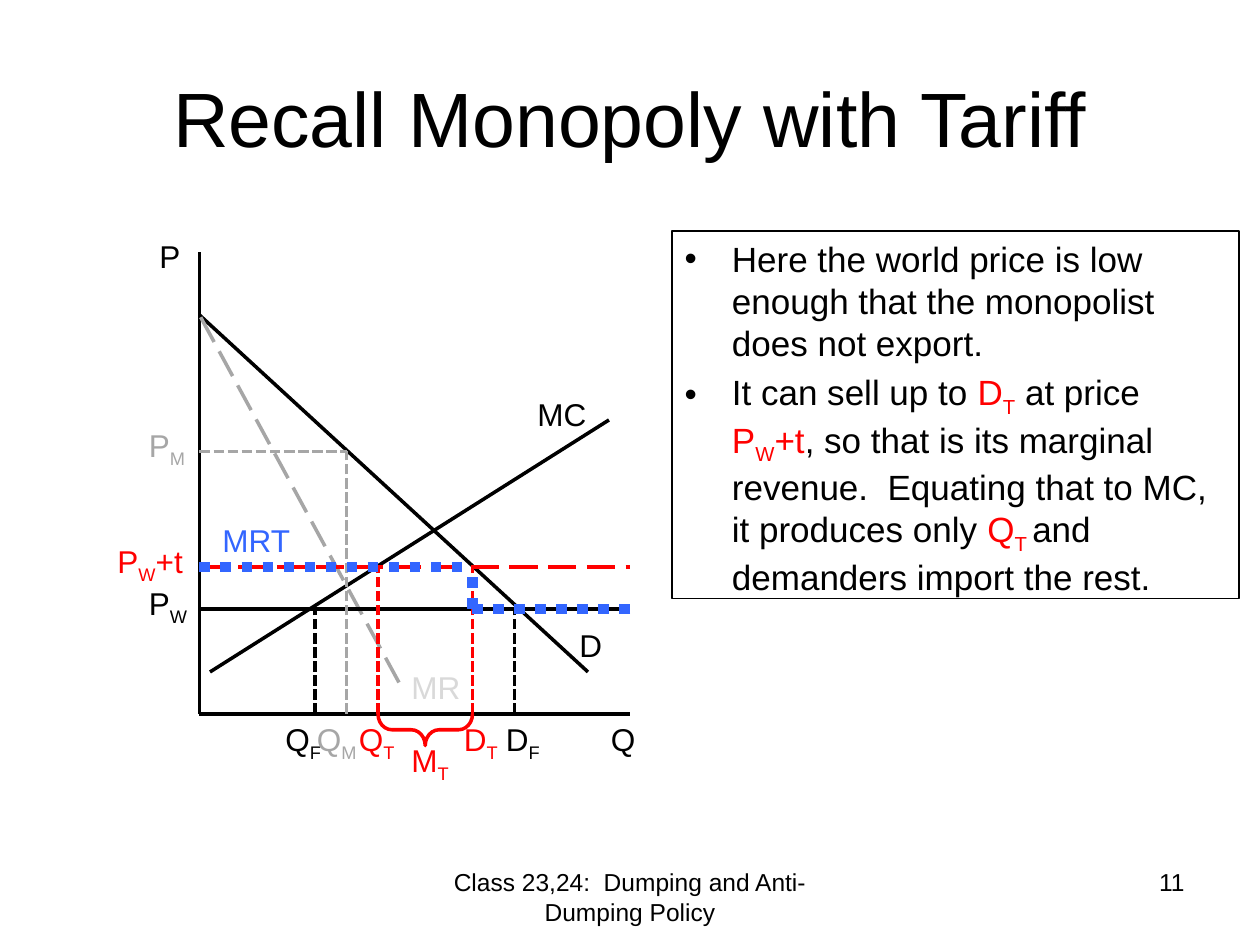
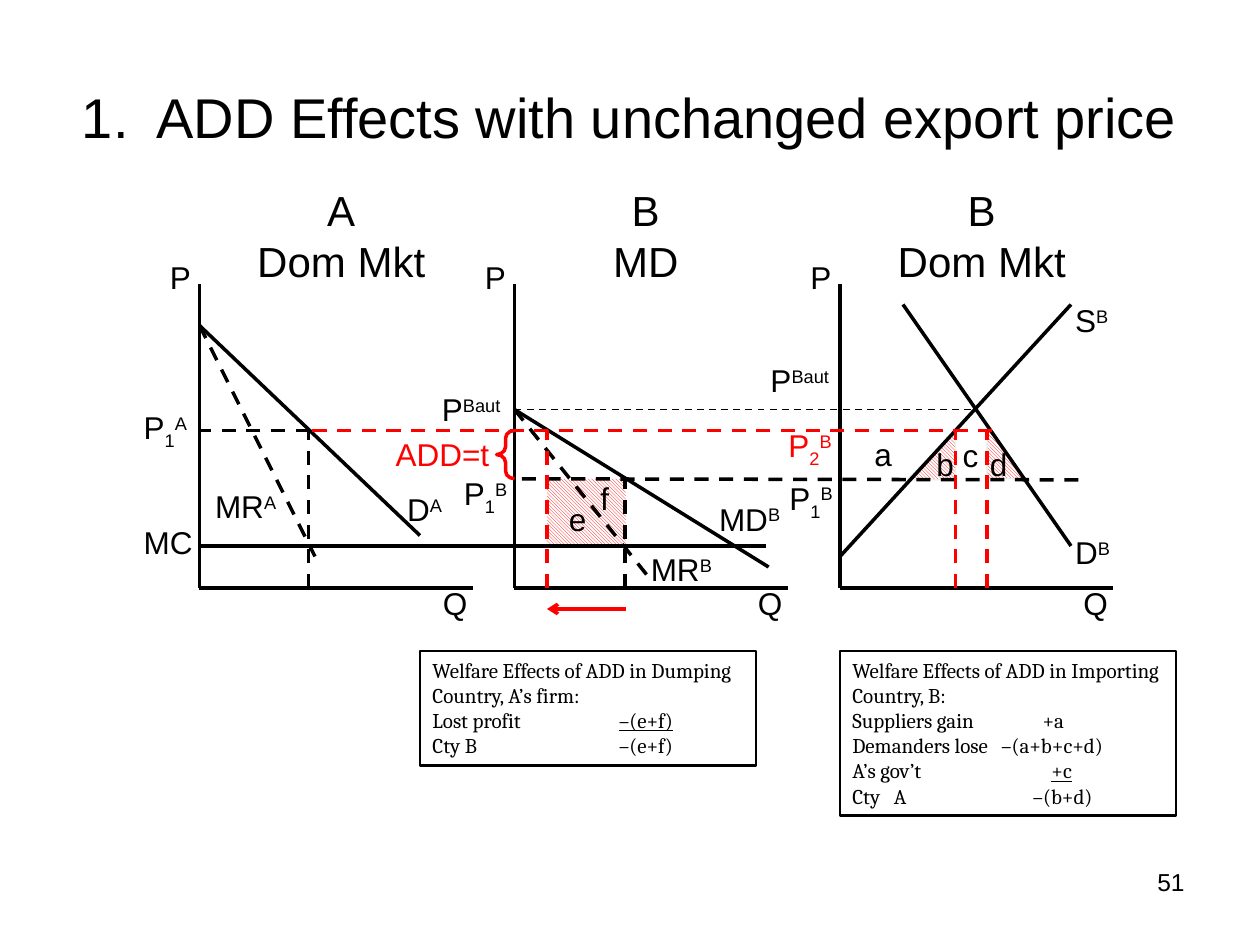
from lxml.etree import SubElement
from pptx import Presentation
from pptx.dml.color import RGBColor
from pptx.enum.dml import MSO_LINE, MSO_PATTERN
from pptx.enum.shapes import MSO_CONNECTOR, MSO_SHAPE
from pptx.enum.text import MSO_ANCHOR, MSO_AUTO_SIZE, PP_ALIGN
from pptx.oxml.ns import qn
from pptx.util import Inches, Pt

COLORS = {"ink": "000000", "red": "FF0000", "blue": "3366FF", "gray": "A6A6A6",
          "pale": "D9D9D9", "white": "FFFFFF", "mist": "E0F1F2"}
LAYOUTS = {"title and body": 1, "title only": 5}
BASELINES = {"_": "-25000", "^": "30000"}
SLIDE_WIDTH, SLIDE_HEIGHT = Inches(10), Inches(7.5)
CELL = SLIDE_WIDTH / 120  # all positions are in columns and rows of this grid
LABEL_SIZE = (9, 4.8)


def cells(*values):
    return [round(value * CELL) for value in values]


def color(name):
    return RGBColor.from_string(COLORS[name])


def write(paragraph, pieces, size, ink="ink", font="Arial"):
    """Add runs; a piece is text or (text, colour), with _ for sub- and ^ for superscript."""
    for piece in pieces:
        text, run_ink = piece if isinstance(piece, tuple) else (piece, ink)
        run = paragraph.add_run()
        run.text = text.lstrip("_^")
        run.font.name, run.font.size = font, Pt(size)
        run.font.color.rgb = color(run_ink)
        if text[0] in BASELINES:
            run.font._element.set("baseline", BASELINES[text[0]])


def add_text(slide, box, lines, size, ink="ink", align=PP_ALIGN.LEFT):
    frame = slide.shapes.add_textbox(*cells(*box)).text_frame
    frame.word_wrap = True
    for index, pieces in enumerate(lines):
        paragraph = frame.add_paragraph() if index else frame.paragraphs[0]
        paragraph.alignment = align
        write(paragraph, pieces, size, ink)


def add_labels(slide, ink, labels):
    for left, top, *pieces in labels:
        add_text(slide, (left, top, *LABEL_SIZE), [pieces], 18, ink)


def add_line(slide, start, end, ink="ink", dash=None, width=2, arrow=False):
    connector = slide.shapes.add_connector(MSO_CONNECTOR.STRAIGHT, *cells(*start, *end))
    connector.line.color.rgb = color(ink)
    connector.line.width = Pt(width)
    if dash:
        connector.line.dash_style = dash
    if arrow:
        SubElement(connector.line._get_or_add_ln(), qn("a:tailEnd"), type="arrow")
    SubElement(connector._element.spPr, qn("a:effectLst"))


def add_axes(slide, left, bottom, top, right):
    add_line(slide, (left, bottom), (right, bottom))
    add_line(slide, (left, bottom), (left, top))


def add_outline(slide, kind, box, ink="ink", width=2.0):
    shape = slide.shapes.add_shape(kind, *cells(*box))
    shape.shadow.inherit = False
    shape.fill.background()
    shape.line.color.rgb = color(ink)
    shape.line.width = Pt(width)
    return shape


def add_brace(slide, box, rotation=0):
    brace = add_outline(slide, MSO_SHAPE.LEFT_BRACE, box, "red")
    brace.adjustments[0] = 0.44
    brace.rotation = rotation


def add_hatched(slide, kind, box, outlined=True, flipped=False):
    shape = add_outline(slide, kind, box, "mist", 0.75)
    shape.fill.patterned()
    shape.fill.pattern = MSO_PATTERN.DARK_DOWNWARD_DIAGONAL
    shape.fill.fore_color.rgb = color("red")
    shape.fill.back_color.rgb = color("white")
    if not outlined:
        shape.line.fill.background()
    if flipped:
        shape._element.spPr.xfrm.set("flipH", "1")


def add_welfare_box(slide, box, heading, rows):
    """Add a bordered list; each row is (text, underlined text, tab stops in inches)."""
    frame = add_outline(slide, MSO_SHAPE.RECTANGLE, box, width=1.5).text_frame
    frame.word_wrap = True
    frame.vertical_anchor = MSO_ANCHOR.TOP
    for index, (text, underlined, stops) in enumerate([(heading, "", ()), *rows]):
        paragraph = frame.add_paragraph() if index else frame.paragraphs[0]
        paragraph.alignment = PP_ALIGN.LEFT
        write(paragraph, filter(None, (text, underlined)), 12, font="Cambria")
        if underlined:
            paragraph.runs[-1].font.underline = True
        if stops:
            tabs = SubElement(paragraph._p.get_or_add_pPr(), qn("a:tabLst"))
            for stop in stops:
                SubElement(tabs, qn("a:tab"), pos=str(Inches(stop)), algn="l")


def start_slide(presentation, layout, title, size, number):
    slide = presentation.slides.add_slide(presentation.slide_layouts[LAYOUTS[layout]])
    heading = slide.shapes.title
    heading.left, heading.top, heading.width, heading.height = cells(6, 3.6, 108, 15)
    frame = heading.text_frame
    frame.auto_size = MSO_AUTO_SIZE.NONE
    frame.vertical_anchor = MSO_ANCHOR.MIDDLE
    frame.paragraphs[0].alignment = PP_ALIGN.CENTER
    write(frame.paragraphs[0], [title], size)
    add_text(slide, (86, 82, 28, 6.2), [[number]], 14, align=PP_ALIGN.RIGHT)
    return slide


def fill_body(slide, bullets):
    body = slide.placeholders[1]
    body.left, body.top, body.width, body.height = cells(64, 22, 54, 35)
    body.line.color.rgb = color("ink")
    body.line.width = Pt(0.75)
    frame = body.text_frame
    frame.auto_size = MSO_AUTO_SIZE.NONE
    for index, pieces in enumerate(bullets):
        paragraph = frame.add_paragraph() if index else frame.paragraphs[0]
        write(paragraph, pieces, 20)


def build_tariff_slide(presentation):
    slide = start_slide(presentation, "title and body", "Recall Monopoly with Tariff", 44, "11")
    fill_body(slide, [
        ["Here the world price is low enough that the monopolist does not export."],
        ["It can sell up to ", ("D", "red"), ("_T", "red"), " at price ", ("P", "red"),
         ("_W", "red"), ("+t", "red"),
         ", so that is its marginal revenue.  Equating that to MC, it produces only ",
         ("Q", "red"), ("_T ", "red"), "and demanders import the rest."]])
    left, bottom, right = 19, 68, 60
    world, tariff, monopoly = 58, 54, 43  # price rows
    dotted, fine = MSO_LINE.ROUND_DOT, MSO_LINE.SQUARE_DOT
    add_axes(slide, left, bottom, 24, right)
    add_line(slide, (56, 64), (left, 30))
    add_line(slide, (58, 40), (20, 64))
    add_line(slide, (38, 65), (left, 30), "gray", MSO_LINE.LONG_DASH)
    add_line(slide, (left, monopoly), (33, monopoly), "gray", fine)
    add_line(slide, (left, world), (right, world))
    add_line(slide, (left, tariff), (right, tariff), "red", MSO_LINE.LONG_DASH)
    for column, price, ink in [(33, monopoly, "gray"), (30, world, "ink"), (49, world, "ink"),
                               (36, tariff, "red"), (45, tariff, "red")]:
        add_line(slide, (column, bottom), (column, price), ink, fine)
    add_brace(slide, (39, 65, 3, 9), 270)
    for start, end in [((left, tariff), (45, tariff)), ((45, world), (45, tariff)),
                       ((right, world), (44, world))]:
        add_line(slide, start, end, "blue", dotted, 6)
    add_labels(slide, "ink", [(14, 22, "P"), (57, 68, "Q"), (50, 37, "MC"), (54, 59, "D"),
                              (13, 55, "P", "_W"), (26, 68, "Q", "_F"), (47, 68, "D", "_F")])
    add_labels(slide, "gray", [(29, 68, "Q", "_M"), (13, 40, "P", "_M")])
    add_labels(slide, "pale", [(38, 63, "MR")])
    add_labels(slide, "red", [(10, 51, "P", "_W", "+t"), (33, 68, "Q", "_T"),
                              (43, 68, "D", "_T"), (38, 70, "M", "_T")])
    add_labels(slide, "blue", [(20, 49, "MRT")])
    add_text(slide, (41, 82, 38, 6.2), [["Class 23,24:  Dumping and Anti-Dumping Policy"]],
             14, align=PP_ALIGN.CENTER)


def build_duty_slide(presentation):
    slide = start_slide(presentation, "title only",
                        "1.  ADD Effects with unchanged export price", 32, "51")
    bottom, top, cost = 56, 27, 52
    autarky, duty, export = 39, 41, 45.6  # price rows
    dash = MSO_LINE.DASH
    add_hatched(slide, MSO_SHAPE.RIGHT_TRIANGLE, (94, 40.6, 3.5, 5))
    add_hatched(slide, MSO_SHAPE.RIGHT_TRIANGLE, (86.4, duty, 4.6, 4.7), flipped=True)
    add_hatched(slide, MSO_SHAPE.RECTANGLE, (52.1, export, 7.5, cost - export), outlined=False)

    panels = [(19, 23, 15, 41, "A", "Dom Mkt"), (49, 52, 45, 71, "B", "MD"),
              (80, 84, 76, 102, "B", "Dom Mkt")]
    for left, heading_left, price_left, quantity_left, country, market in panels:
        add_axes(slide, left, bottom, top, left + 26)
        add_text(slide, (heading_left, 17, 19, 11), [[country], [market]], 24,
                 align=PP_ALIGN.CENTER)
        add_labels(slide, "ink", [(price_left, 24, "P"), (quantity_left, 55, "Q")])

    for start, end in [((19, 31), (40, 51)), ((86, 29), (102, 52)), ((80, 53), (102, 29)),
                       ((49, autarky), (73.2, 54)), ((19, cost), (73, cost))]:
        add_line(slide, start, end)
    add_line(slide, (49, autarky), (93, autarky), dash=dash, width=1)
    for start, end in [((49, autarky), (61.8, 55)), ((19, 31), (30, 53)),
                       ((29.4, bottom), (29.4, duty)), ((29.5, duty), (19, duty)),
                       ((102.7, 45.7), (49, export)), ((59.5, bottom), (59.5, export))]:
        add_line(slide, start, end, dash=dash)
    add_line(slide, (94.5, duty), (29.5, duty), "red", dash)
    for column in (52.1, 91, 94):
        add_line(slide, (column, bottom), (column, duty), "red", dash)
    add_line(slide, (59.6, 58), (52.1, 58), "red", arrow=True)
    add_brace(slide, (47.3, duty, 1.7, export - duty))

    add_labels(slide, "ink", [
        (101.2, 28.1, "S", "^B"), (101.2, 50.2, "D", "^B"), (67.3, 47, "MD", "^B"),
        (60.8, 51.8, "MR", "^B"), (72.2, 33.8, "P", "^Baut"), (40.9, 36.6, "P", "^Baut"),
        (37.6, 46.1, "D", "^A"), (19.3, 45.8, "MR", "^A"), (12.5, 49.2, "MC"),
        (43, 44.6, "P", "_1", "^B"), (74, 45, "P", "_1", "^B"), (12.5, 38.3, "P", "_1", "^A"),
        (82.1, 40.8, "a"), (88, 41.8, "b"), (90.5, 40.9, "c"), (93.1, 41.8, "d"),
        (53, 47, "e"), (56, 45, "f")])
    add_labels(slide, "red", [(73.9, 40, "P", "_2", "^B")])
    add_text(slide, (36.5, 40.8, 14, 4.8), [["ADD=t"]], 18, "red")

    add_welfare_box(slide, (40, 62, 32, 10.9),
                    "Welfare Effects of ADD in Dumping Country, A’s firm:",
                    [("Lost profit\t", "\t–(e+f)\t", (1.37, 1.48, 1.94)),
                     ("Cty B\t–(e+f)", "", (1.48,))])
    add_welfare_box(slide, (80, 62, 32, 15.7),
                    "Welfare Effects of ADD in Importing Country, B:",
                    [("Suppliers gain\t+a", "", (1.51,)),
                     ("Demanders lose\t–(a+b+c+d)", "", (1.18,)),
                     ("A’s gov’t\t", "\t+c", (1.25, 1.58)),
                     ("Cty\tA\t–(b+d)", "", (0.33, 1.43))])


def main():
    presentation = Presentation()
    presentation.slide_width, presentation.slide_height = SLIDE_WIDTH, SLIDE_HEIGHT
    build_tariff_slide(presentation)
    build_duty_slide(presentation)
    presentation.save("out.pptx")


if __name__ == "__main__":
    main()
